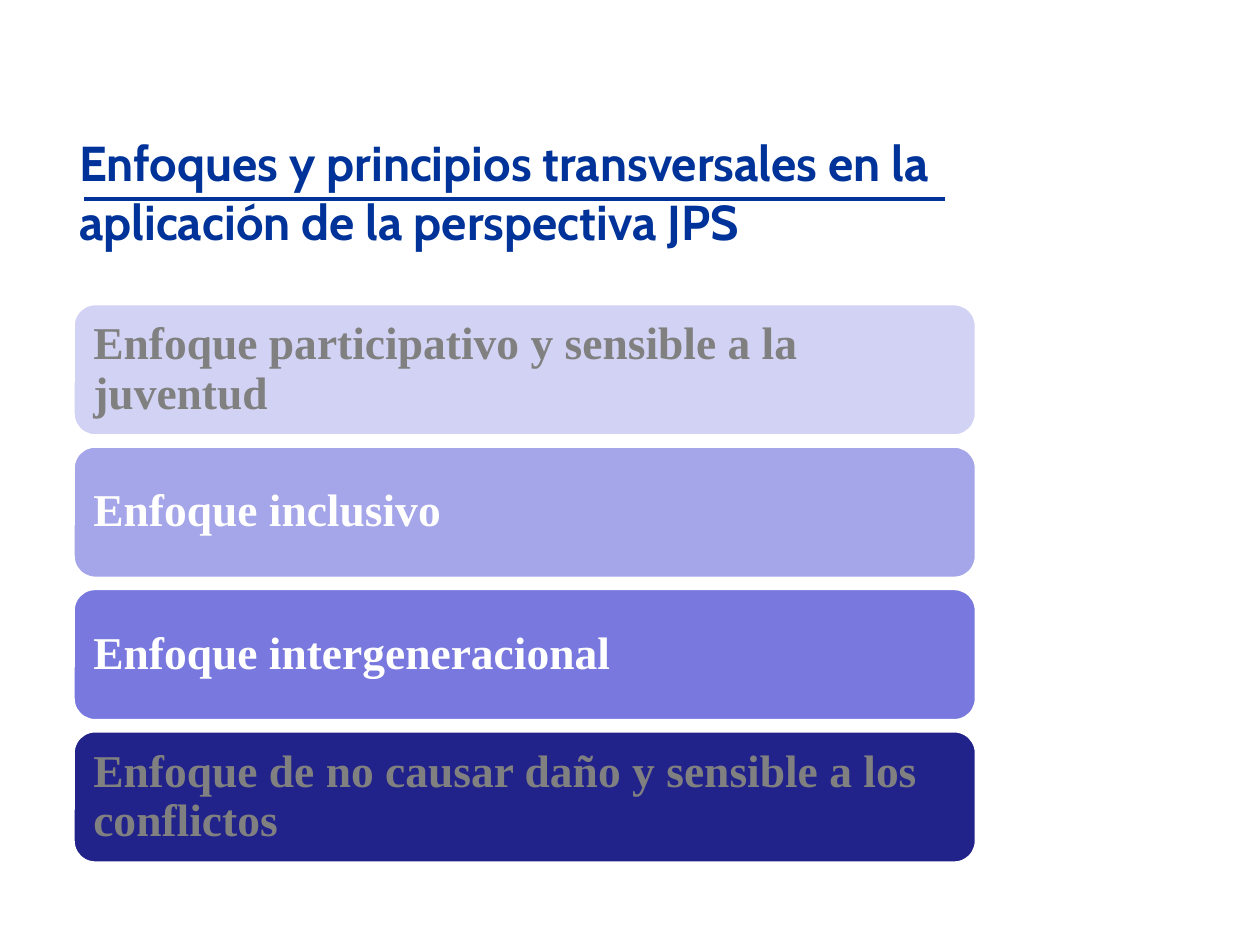
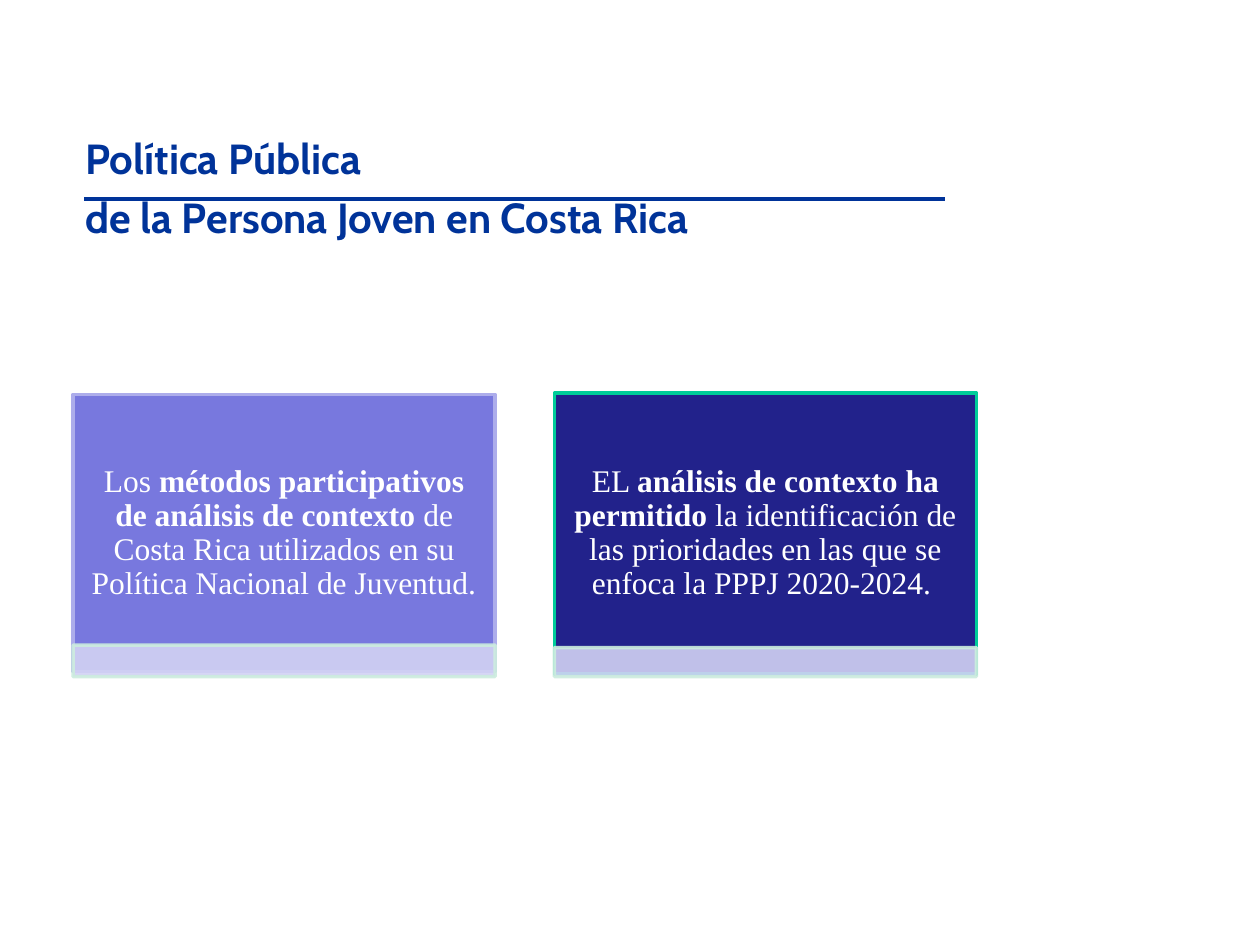
import pptx
import pptx.util
import pptx.dml.color
import pptx.enum.shapes
import pptx.enum.text
import lxml.etree
from pptx.util import Inches

THEME = {
    "navy": "003399", "white": "FFFFFF", "grey": "808080", "pale": "D2D2F4",
    "lilac": "A5A5E9", "violet": "7878DE", "indigo": "22228B",
    "violet_edge": "ADADEB", "green_edge": "00CC99", "strip_edge": "CCECDE",
    "title_font": "Cabin", "body_font": "Times New Roman",
    "approach_size": 26, "card_size": 18, "line_width": 2,
}
SHAPES = pptx.enum.shapes.MSO_SHAPE
ALIGN = pptx.enum.text.PP_ALIGN
MIDDLE = pptx.enum.text.MSO_ANCHOR.MIDDLE


def add_block(slide, preset, box, fill, edge):
    """Add a filled, outlined preset shape; colours are theme keys."""
    block = slide.shapes.add_shape(preset, *map(Inches, box))
    block.shadow.inherit = False
    block.fill.solid()
    block.fill.fore_color.rgb = pptx.dml.color.RGBColor.from_string(THEME[fill])
    block.line.color.rgb = pptx.dml.color.RGBColor.from_string(THEME[edge])
    block.line.width = pptx.util.Pt(THEME["line_width"])
    return block


def write(frame, paragraphs, font, size, colour, align, frame_format, spacing):
    """Fill a frame; each paragraph is a list of (text, bold) runs."""
    for key, value in {"word_wrap": True, **frame_format}.items():
        setattr(frame, key, value)
    for index, runs in enumerate(paragraphs):
        paragraph = frame.add_paragraph() if index else frame.paragraphs[0]
        paragraph.alignment = align
        paragraph.line_spacing = spacing
        if index:
            paragraph.space_before = pptx.util.Pt(size * 0.2)
        for text, bold in runs:
            run = paragraph.add_run()
            run.text = text
            run.font.color.rgb = pptx.dml.color.RGBColor.from_string(THEME[colour])
            run_format = {"name": THEME[font], "size": pptx.util.Pt(size), "bold": bold}
            for key, value in run_format.items():
                setattr(run.font, key, value)


deck = pptx.Presentation()
deck.slide_width, deck.slide_height = Inches(10), Inches(7.5)

# Shared header: rule and title on both slides
headers = [
    (0.53, 28, ["Enfoques y principios transversales en la aplicación de la perspectiva JPS"]),
    (0.58, 24, ["Política Pública", "de la Persona Joven en Costa Rica"]),
]
for left, size, lines in headers:
    slide = deck.slides.add_slide(deck.slide_layouts[6])
    rule = slide.shapes.add_connector(
        pptx.enum.shapes.MSO_CONNECTOR.STRAIGHT,
        Inches(0.67), Inches(1.58), Inches(7.5), Inches(1.58))
    rule.line.color.rgb = pptx.dml.color.RGBColor.from_string(THEME["navy"])
    rule.line.width = pptx.util.Pt(THEME["line_width"])
    lxml.etree.SubElement(rule._element.spPr, pptx.oxml.ns.qn("a:effectLst"))
    title = slide.shapes.add_textbox(Inches(left), Inches(1), Inches(7.17), Inches(1.08))
    write(title.text_frame, [[(line, True)] for line in lines], "title_font", size,
          "navy", ALIGN.LEFT, {}, 1.0)
approaches_slide, policy_slide = deck.slides

# Slide 1: stacked approaches
approaches = [
    ("Enfoque participativo y sensible a la juventud", "pale", "grey"),
    ("Enfoque inclusivo", "lilac", "white"),
    ("Enfoque intergeneracional", "violet", "white"),
    ("Enfoque de no causar daño y sensible a los conflictos", "indigo", "grey"),
]
approach_frame = {"vertical_anchor": MIDDLE, "margin_left": Inches(0.11),
                  "margin_right": Inches(0.11), "margin_top": Inches(0.11),
                  "margin_bottom": Inches(0.11)}
for row, (text, fill, colour) in enumerate(approaches):
    approach = add_block(approaches_slide, SHAPES.ROUNDED_RECTANGLE,
                         (0.58, 2.41 + row * 1.13, 7.17, 1.05), fill, "white")
    write(approach.text_frame, [[(text, True)]], "body_font", THEME["approach_size"],
          colour, ALIGN.LEFT, approach_frame, 0.9)

# Slide 2: two cards, each with a translucent strip at its foot
cards = [
    (0.58, 3.13, 2.2, 5.12, 0.25, "violet", "violet_edge", [
        ("Los ", False),
        ("métodos participativos de análisis de contexto ", True),
        ("de Costa Rica utilizados en su Política Nacional de Juventud.", False)]),
    (4.4, 3.12, 2.23, 5.14, 0.23, "indigo", "green_edge", [
        ("EL ", False),
        ("análisis de contexto ha permitido", True),
        (" la identificación de las prioridades en las que se enfoca la "
         "PPPJ 2020-2024. ", False)]),
]
card_width = 3.35
card_frame = {"vertical_anchor": MIDDLE, "margin_left": Inches(0.14),
              "margin_right": Inches(0.14), "margin_top": Inches(0.08),
              "margin_bottom": Inches(0.08)}
for left, top, height, strip_top, strip_height, fill, edge, runs in cards:
    card = add_block(policy_slide, SHAPES.RECTANGLE,
                     (left, top, card_width, height), fill, edge)
    write(card.text_frame, [runs], "body_font", THEME["card_size"], "white",
          ALIGN.CENTER, card_frame, 0.9)
    strip = add_block(policy_slide, SHAPES.RECTANGLE,
                      (left, strip_top, card_width, strip_height), "pale", "strip_edge")
    for colour in strip._element.spPr.iter(pptx.oxml.ns.qn("a:srgbClr")):
        lxml.etree.SubElement(colour, pptx.oxml.ns.qn("a:alpha"), val="90000")

deck.save("out.pptx")
